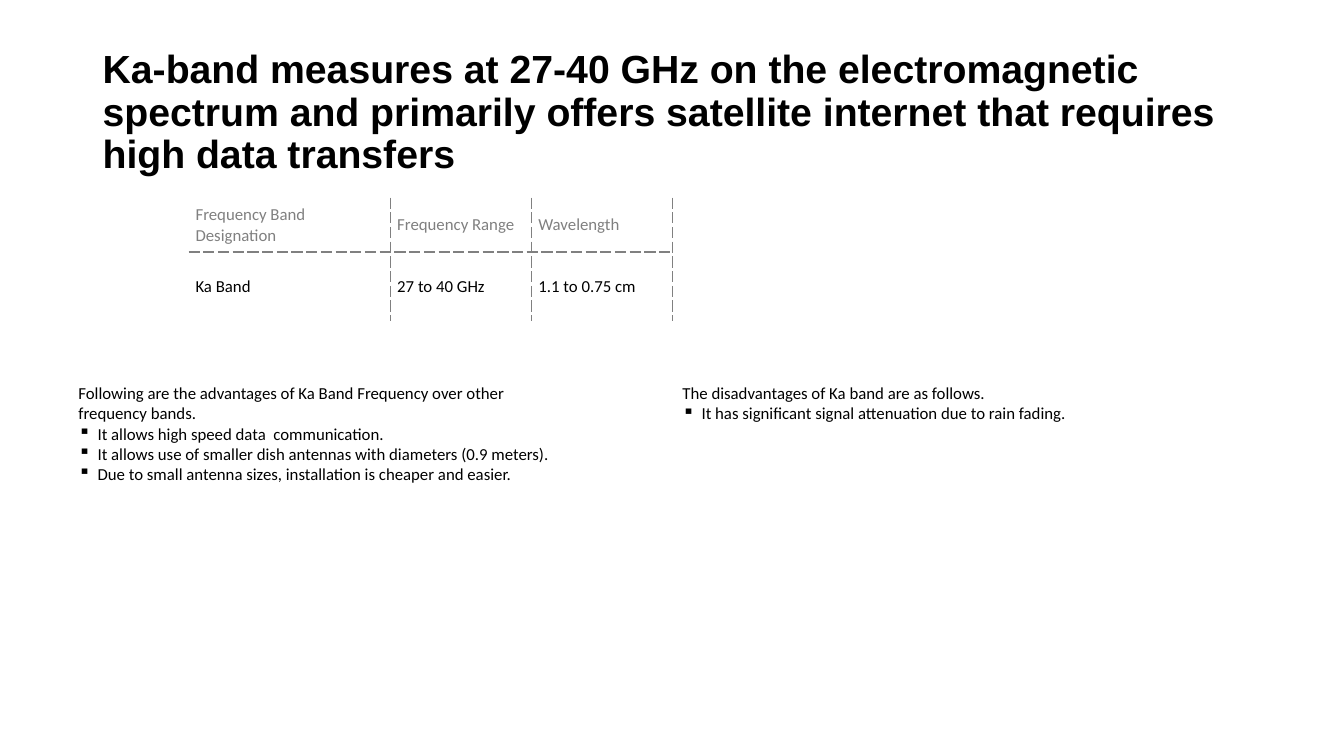
from dataclasses import dataclass

import lxml.etree
import pptx
import pptx.dml.color
import pptx.enum.text
import pptx.oxml.ns
import pptx.util

Inches = pptx.util.Inches
Pt = pptx.util.Pt
qn = pptx.oxml.ns.qn
MIDDLE = pptx.enum.text.MSO_ANCHOR.MIDDLE
TOP = pptx.enum.text.MSO_ANCHOR.TOP


# Theme: colours, fonts and type sizes
@dataclass(frozen=True)
class Theme:
    ink: str = "000000"
    muted: str = "808080"
    paper: str = "FFFFFF"
    title_font: str = "Arial"
    body_font: str = "Calibri"
    title_size: int = 28
    body_size: int = 12
    rule_width: int = 1


@dataclass(frozen=True)
class Box:
    """Left, top, width and height as shares of the slide's size."""
    left: float
    top: float
    width: float
    height: float


@dataclass(frozen=True)
class ProsCons:
    column: int
    lead: str
    bullets: tuple[str, ...]


THEME = Theme()
SLIDE_WIDTH, SLIDE_HEIGHT = Inches(13.33), Inches(7.5)

# Content
TITLE = ("Ka-band measures at 27-40 GHz on the electromagnetic spectrum and "
         "primarily offers satellite internet that requires high data transfers")
TITLE_BOX = Box(0.92 / 13.33, 0.4 / 7.5, 11.5 / 13.33, 1.45 / 7.5)
BAND_ROWS = (
    ("Frequency Band Designation", "Frequency Range", "Wavelength"),
    ("Ka Band", "27 to 40 GHz", "1.1 to 0.75 cm"),
)
BAND_BOX = Box(1.87 / 13.33, 1.96 / 7.5, 4.8 / 13.33, 1.22 / 7.5)
COLUMN_SHARES = (2 / 4.8, 1.4 / 4.8, 1.4 / 4.8)
ROW_SHARES = (0.53 / 1.22, 0.69 / 1.22)
CELL_MARGIN = Inches(0.07)
TEXT_BOX = Box(0.68 / 13.33, 3.75 / 7.5, 5 / 13.33, 3.08 / 7.5)
COLUMN_PITCH = 5.99 / 13.33
BULLET_INDENT = Inches(0.19)
SIDES = (
    ProsCons(0, "Following are the advantages of Ka Band Frequency over other frequency bands.", (
        "It allows high speed data  communication.",
        "It allows use of smaller dish antennas with diameters (0.9 meters).",
        "Due to small antenna sizes, installation is cheaper and easier.",
    )),
    ProsCons(1, "The disadvantages of Ka band are as follows.", (
        "It has significant signal attenuation due to rain fading.",
    )),
)


def place(box: Box) -> tuple[int, int, int, int]:
    return (round(box.left * SLIDE_WIDTH), round(box.top * SLIDE_HEIGHT),
            round(box.width * SLIDE_WIDTH), round(box.height * SLIDE_HEIGHT))


def style(paragraph, color: str, font: str = THEME.body_font,
          size: int = THEME.body_size, bold: bool = False) -> None:
    paragraph.font.name = font
    paragraph.font.size = Pt(size)
    paragraph.font.bold = bold
    paragraph.font.color.rgb = pptx.dml.color.RGBColor.from_string(color)


def add_text_frame(slide, box: Box, anchor):
    frame = slide.shapes.add_textbox(*place(box)).text_frame
    frame.word_wrap = True
    frame.vertical_anchor = anchor
    return frame


def add_bullet(paragraph) -> None:
    properties = paragraph._p.get_or_add_pPr()
    properties.set("marL", str(BULLET_INDENT))
    properties.set("indent", str(-BULLET_INDENT))
    lxml.etree.SubElement(properties, qn("a:buChar"), char="▪")


def set_borders(cell, dashed: set[str]) -> None:
    """Dash the named sides; leave the others without a line."""
    properties = cell._tc.get_or_add_tcPr()
    for index, side in enumerate(("lnL", "lnR", "lnT", "lnB")):
        line = lxml.etree.Element(qn(f"a:{side}"), w=str(Pt(THEME.rule_width)))
        properties.insert(index, line)
        if side in dashed:
            fill = lxml.etree.SubElement(line, qn("a:solidFill"))
            lxml.etree.SubElement(fill, qn("a:srgbClr"), val=THEME.muted)
            lxml.etree.SubElement(line, qn("a:prstDash"), val="sysDash")
        else:
            lxml.etree.SubElement(line, qn("a:noFill"))


def add_title(slide) -> None:
    paragraph = add_text_frame(slide, TITLE_BOX, MIDDLE).paragraphs[0]
    paragraph.text = TITLE
    paragraph.line_spacing = 0.9
    style(paragraph, THEME.ink, THEME.title_font, THEME.title_size, bold=True)


def add_band_table(slide) -> None:
    left, top, width, height = place(BAND_BOX)
    table = slide.shapes.add_table(len(BAND_ROWS), len(COLUMN_SHARES),
                                   left, top, width, height).table
    table.first_row = table.horz_banding = False
    for column, share in zip(table.columns, COLUMN_SHARES):
        column.width = round(width * share)
    for row, share in zip(table.rows, ROW_SHARES):
        row.height = round(height * share)
    for row_index, texts in enumerate(BAND_ROWS):
        header = row_index == 0
        for column_index, text in enumerate(texts):
            cell = table.cell(row_index, column_index)
            cell.text = text
            cell.vertical_anchor = MIDDLE
            cell.margin_left = cell.margin_right = CELL_MARGIN
            cell.margin_top = cell.margin_bottom = CELL_MARGIN
            style(cell.text_frame.paragraphs[0], THEME.muted if header else THEME.ink)
            if header:
                cell.fill.background()
            else:
                cell.fill.solid()
                cell.fill.fore_color.rgb = pptx.dml.color.RGBColor.from_string(THEME.paper)
            dashed = {"lnR", "lnB" if header else "lnT"}
            if column_index > 0:
                dashed.add("lnL")
            set_borders(cell, dashed)


def add_side(slide, side: ProsCons) -> None:
    box = Box(TEXT_BOX.left + side.column * COLUMN_PITCH, TEXT_BOX.top,
              TEXT_BOX.width, TEXT_BOX.height)
    frame = add_text_frame(slide, box, TOP)
    frame.paragraphs[0].text = side.lead
    for text in side.bullets:
        paragraph = frame.add_paragraph()
        paragraph.text = text
        add_bullet(paragraph)
    for paragraph in frame.paragraphs:
        style(paragraph, THEME.ink)


def main() -> None:
    presentation = pptx.Presentation()
    presentation.slide_width, presentation.slide_height = SLIDE_WIDTH, SLIDE_HEIGHT
    slide = presentation.slides.add_slide(presentation.slide_layouts[6])
    add_title(slide)
    add_band_table(slide)
    for side in SIDES:
        add_side(slide, side)
    presentation.save("out.pptx")


if __name__ == "__main__":
    main()
